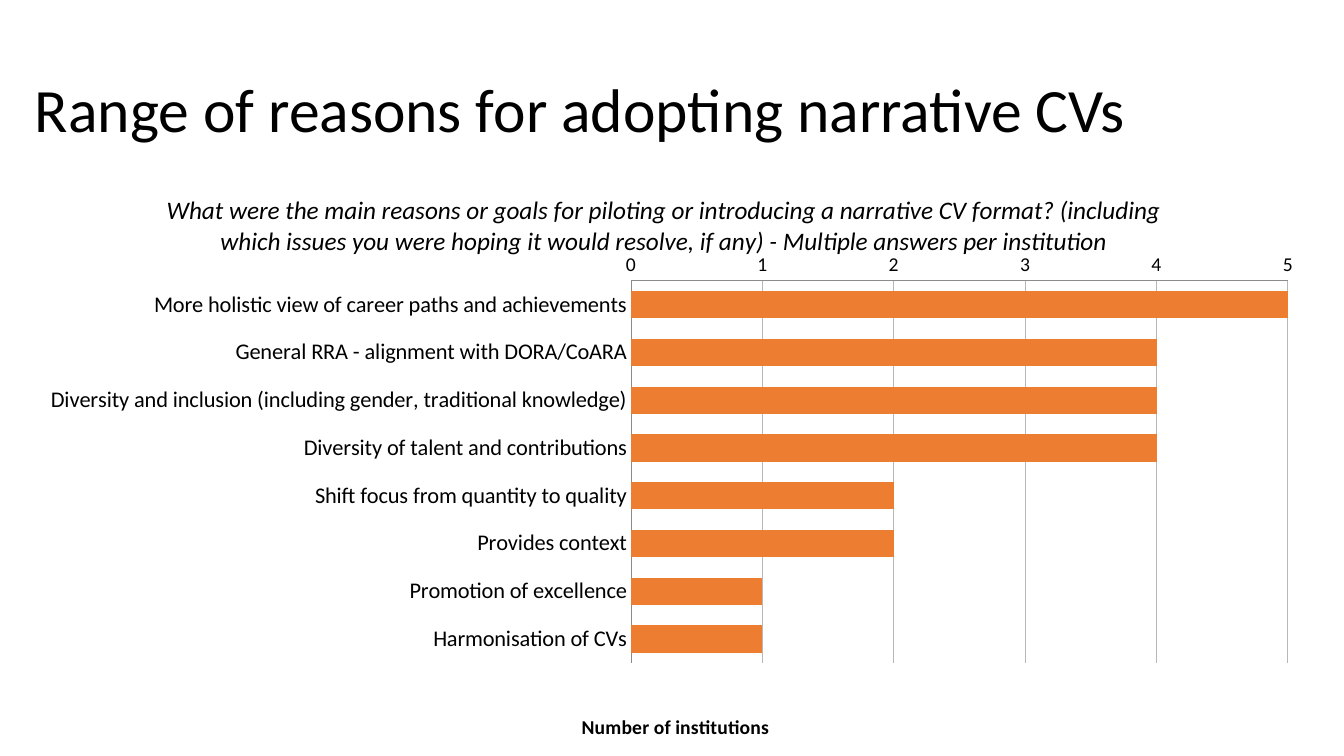
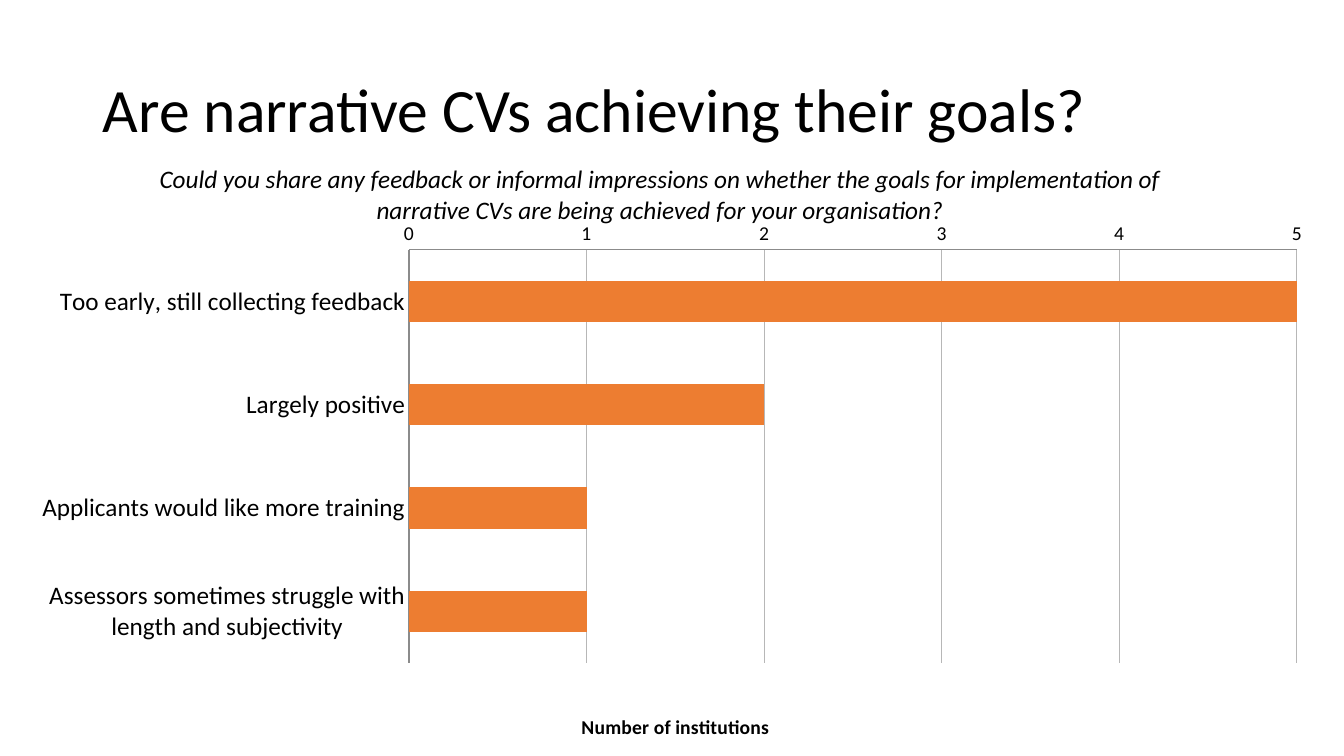
from dataclasses import dataclass

from pptx import Presentation
from pptx.chart.data import CategoryChartData as Data
from pptx.dml.color import RGBColor as Rgb
from pptx.enum.chart import XL_AXIS_CROSSES as Cross
from pptx.enum.chart import XL_CHART_TYPE as Kind
from pptx.enum.chart import XL_TICK_MARK as Tick
from pptx.enum.text import MSO_ANCHOR as Anchor
from pptx.oxml import parse_xml
from pptx.oxml.ns import nsdecls, qn
from pptx.util import Pt


@dataclass(frozen=True)
class Theme:
    face: str = "Calibri"
    ink: Rgb = Rgb.from_string("000000")
    bar: Rgb = Rgb.from_string("ED7D31")
    grid: Rgb = Rgb.from_string("B7B7B7")
    axis: Rgb = Rgb.from_string("8B8B8B")
    head: int = 44
    ask: int = 18
    tick: int = 14
    rule: float = 0.75
    gap: int = 150


T = Theme()
WIDE, HIGH = 1344, 756
SCALE = 914400 / 100.8  # EMU in one px

# Slide content; all boxes are left, top, width, height in px
SLIDES = [
    dict(
        head="Range of reasons for adopting narrative CVs",
        spot=(25, 40, 1307, 146),
        ask="What were the main reasons or goals for piloting or introducing a "
            "narrative CV format? (including which issues you were hoping it "
            "would resolve, if any) - Multiple answers per institution",
        frame=(25, 176, 1293, 580),
        plot=(631, 281, 657, 382),
        ask_at=(162, 188),
        size=16,
        rows={
            "More holistic view of career paths and achievements": 5,
            "General RRA - alignment with DORA/CoARA": 4,
            "Diversity and inclusion (including gender, traditional knowledge)": 4,
            "Diversity of talent and contributions": 4,
            "Shift focus from quantity to quality": 2,
            "Provides context": 2,
            "Promotion of excellence": 1,
            "Harmonisation of CVs": 1,
        },
        count=2,
    ),
    dict(
        head="Are narrative CVs achieving their goals?",
        spot=(93, 40, 1159, 146),
        ask="Could you share any feedback or informal impressions on whether the "
            "goals for implementation of narrative CVs are being achieved for "
            "your organisation?",
        frame=(17, 144, 1312, 612),
        plot=(409, 250, 888, 413),
        ask_at=(155, 157),
        size=18,
        rows={
            "Too early, still collecting feedback": 5,
            "Largely positive": 2,
            "Applicants would like more training": 1,
            "Assessors sometimes struggle with length and subjectivity": 1,
        },
        count=1,
    ),
]


def px(*vals):
    return [round(v * SCALE) for v in vals]


def put(item, **form):
    for key, val in form.items():
        setattr(item, key, val)


def ink(font, size, **form):
    put(font, name=T.face, size=Pt(size), **form)
    font.color.rgb = T.ink


def rule(line, color):
    line.color.rgb = color
    line.width = Pt(T.rule)


def place(node, index, frame, box):
    """Give a chart part a fixed place, as fractions of the chart frame."""
    for old in node.findall(qn("c:layout")):
        node.remove(old)
    left, top, wide, high = frame
    parts = zip("xywh", box, (left, top, 0, 0), (wide, high, wide, high))
    vals = [(key, (val - base) / span) for key, val, base, span in parts]
    inner = '<c:layoutTarget val="inner"/>' if len(vals) == 4 else ""
    modes = "".join(f'<c:{k}Mode val="edge"/>' for k, _ in vals if k in "xy")
    sizes = "".join(f'<c:{k} val="{v:.4f}"/>' for k, v in vals)
    node.insert(index, parse_xml(
        f'<c:layout {nsdecls("c")}><c:manualLayout>{inner}{modes}{sizes}'
        "</c:manualLayout></c:layout>"))


def label(title, text, size, frame, spot, **form):
    title.text_frame.text = text
    ink(title.text_frame.paragraphs[0].runs[0].font, size, **form)
    place(title.element, 1, frame, spot)


def heading(slide, text, spot):
    frame = slide.shapes.add_textbox(*px(*spot)).text_frame
    put(frame, word_wrap=True, vertical_anchor=Anchor.MIDDLE, text=text)
    para = frame.paragraphs[0]
    para.line_spacing = 0.9
    ink(para.runs[0].font, T.head)


def bars(slide, info):
    frame, rows = info["frame"], info["rows"]
    data = Data()
    data.categories = list(rows)
    for num in range(info["count"]):
        data.add_series(f"Series {num + 1}", list(rows.values()))
    chart = slide.shapes.add_chart(
        Kind.BAR_CLUSTERED, *px(*frame), data).chart
    put(chart, has_legend=False, has_title=True)
    ink(chart.font, 10)

    # Bars
    plot = chart.plots[0]
    put(plot, gap_width=T.gap, overlap=0, vary_by_categories=False)
    for row in plot.series:
        row.format.fill.solid()
        row.format.fill.fore_color.rgb = T.bar

    # Axes
    cat, val = chart.category_axis, chart.value_axis
    put(cat, reverse_order=True, crosses=Cross.MAXIMUM,
        has_major_gridlines=False)
    put(val, minimum_scale=0, maximum_scale=5, major_unit=1,
        has_major_gridlines=True, has_title=True)
    for axis, size in ((cat, info["size"]), (val, T.tick)):
        put(axis, major_tick_mark=Tick.NONE, minor_tick_mark=Tick.NONE)
        ink(axis.tick_labels.font, size)
        rule(axis.format.line, T.axis)
    rule(val.major_gridlines.format.line, T.grid)

    # Titles and plot area
    label(chart.chart_title, info["ask"], T.ask, frame, info["ask_at"],
          bold=False, italic=True)
    label(val.axis_title, "Number of institutions", T.tick, frame,
          (578, 710), bold=True)
    place(chart.element.find(f'.//{qn("c:plotArea")}'), 0, frame, info["plot"])


def main():
    deck = Presentation()
    deck.slide_width, deck.slide_height = px(WIDE, HIGH)
    for info in SLIDES:
        slide = deck.slides.add_slide(deck.slide_layouts[6])
        bars(slide, info)
        heading(slide, info["head"], info["spot"])
    deck.save("out.pptx")


if __name__ == "__main__":
    main()
